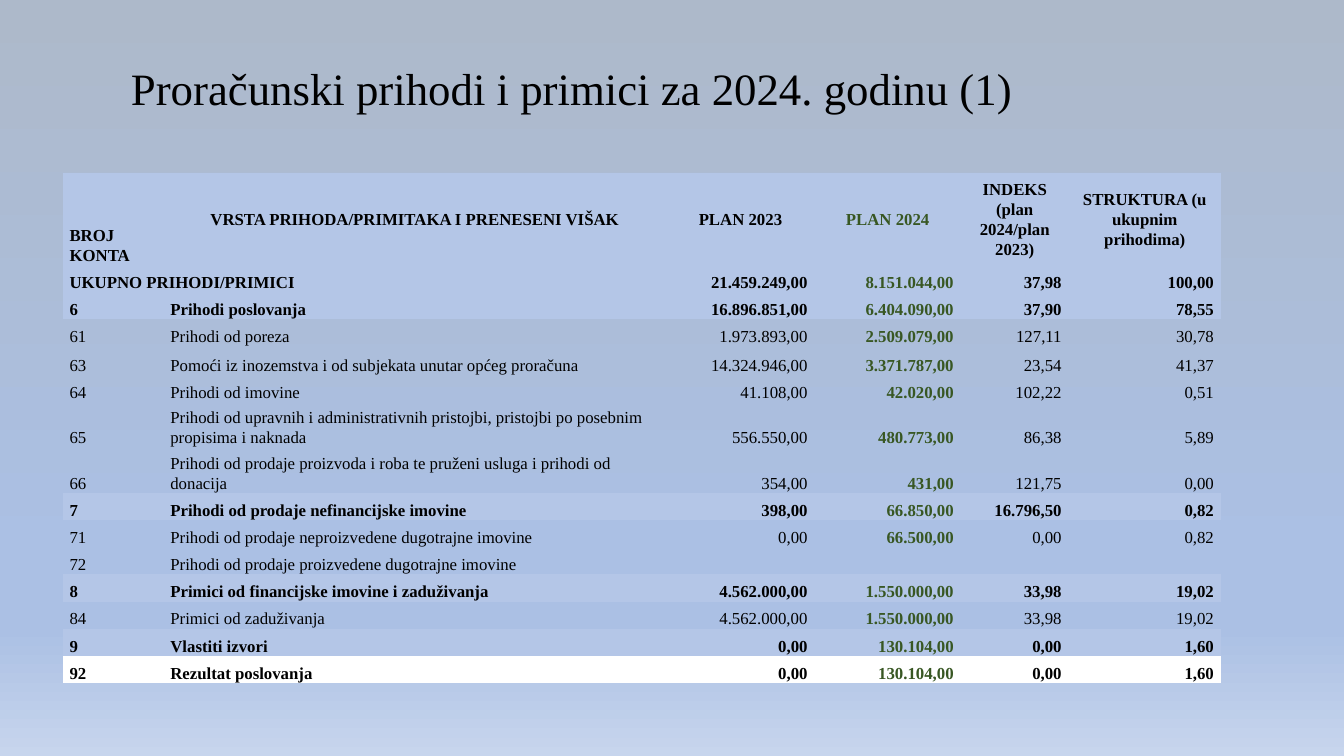
from dataclasses import dataclass
from typing import Optional

from lxml import etree
from pptx import Presentation, util as u
from pptx.dml.color import RGBColor
from pptx.enum import text
from pptx.oxml.ns import qn

PX = 9144  # EMU; 100 px to the inch
FONT = "Times New Roman"
BLACK = RGBColor(0x00, 0x00, 0x00)
GREEN = RGBColor(0x38, 0x57, 0x23)
BAND = RGBColor(0xB4, 0xC6, 0xE7)
WHITE = RGBColor(0xFF, 0xFF, 0xFF)
SKY = [
    (0, RGBColor(0xAD, 0xB9, 0xCA)),
    (74, RGBColor(0xAB, 0xC0, 0xE4)),
    (83, RGBColor(0xAB, 0xC0, 0xE4)),
    (100, RGBColor(0xC7, 0xD5, 0xED)),
]
NO_STYLE_NO_GRID = "{2D5ABB26-0587-4C30-8999-92F81FD0307C}"
LEFT, CENTER, RIGHT = text.PP_ALIGN.LEFT, text.PP_ALIGN.CENTER, text.PP_ALIGN.RIGHT
BOTTOM, MIDDLE = text.MSO_ANCHOR.BOTTOM, text.MSO_ANCHOR.MIDDLE

TITLE = "Proračunski prihodi i primici za 2024. godinu (1)"
COLUMN_WIDTHS = [100, 499, 147, 145, 107, 151]
PLAN_2024 = 3
HEADERS = ["BROJ KONTA", "VRSTA PRIHODA/PRIMITAKA I PRENESENI VIŠAK", "PLAN 2023",
           "PLAN 2024", "INDEKS (plan 2024/plan 2023)",
           "STRUKTURA (u ukupnim prihodima)"]
HEADER_HEIGHT = 91


@dataclass
class Account:
    code: str
    name: str
    values: str
    fill: Optional[RGBColor] = None
    height: int = 27

    @property
    def cells(self) -> list[str]:
        amounts = self.values.split() or [""] * 4
        return [self.code, self.name, *amounts]


ACCOUNTS = [
    Account("UKUPNO PRIHODI/PRIMICI", "", "21.459.249,00 8.151.044,00 37,98 100,00", BAND),
    Account("6", "Prihodi poslovanja", "16.896.851,00 6.404.090,00 37,90 78,55", BAND),
    Account("61", "Prihodi od poreza", "1.973.893,00 2.509.079,00 127,11 30,78"),
    Account("63", "Pomoći iz inozemstva i od subjekata unutar općeg proračuna",
            "14.324.946,00 3.371.787,00 23,54 41,37", height=28),
    Account("64", "Prihodi od imovine", "41.108,00 42.020,00 102,22 0,51"),
    Account("65", "Prihodi od upravnih i administrativnih pristojbi, "
            "pristojbi po posebnim propisima i naknada",
            "556.550,00 480.773,00 86,38 5,89", height=45),
    Account("66", "Prihodi od prodaje proizvoda i roba te pruženi usluga "
            "i prihodi od donacija", "354,00 431,00 121,75 0,00", height=45),
    Account("7", "Prihodi od prodaje nefinancijske imovine",
            "398,00 66.850,00 16.796,50 0,82", BAND),
    Account("71", "Prihodi od prodaje neproizvedene dugotrajne imovine",
            "0,00 66.500,00 0,00 0,82"),
    Account("72", "Prihodi od prodaje proizvedene dugotrajne imovine", ""),
    Account("8", "Primici od financijske imovine i zaduživanja",
            "4.562.000,00 1.550.000,00 33,98 19,02", BAND),
    Account("84", "Primici od zaduživanja", "4.562.000,00 1.550.000,00 33,98 19,02"),
    Account("9", "Vlastiti izvori", "0,00 130.104,00 0,00 1,60", BAND),
    Account("92", "Rezultat poslovanja", "0,00 130.104,00 0,00 1,60", WHITE),
]


def add_run(p, words: str, size: int, color: RGBColor, bold: bool = False) -> None:
    r = p.add_run()
    r.text = words
    r.font.name, r.font.size, r.font.bold = FONT, u.Pt(size), bold
    r.font.color.rgb = color


def paint_background(s) -> None:
    fill = s.background.fill
    fill.gradient()
    fill.gradient_angle = 270
    stops = s._element.find(".//" + qn("a:gsLst"))
    for stop in list(stops):
        stops.remove(stop)
    for percent, color in SKY:
        stop = etree.SubElement(stops, qn("a:gs"), pos=str(percent * 1000))
        etree.SubElement(stop, qn("a:srgbClr"), val=str(color))


def add_title(s) -> None:
    sp = s.shapes.add_textbox(120 * PX, 31 * PX, 1100 * PX, 119 * PX)
    tf = sp.text_frame
    tf.word_wrap = True
    tf.vertical_anchor = MIDDLE
    p = tf.paragraphs[0]
    p.line_spacing = 0.9
    add_run(p, TITLE, 32, BLACK)


def fill_cell(cell, words: str, column: int, fill: Optional[RGBColor],
              align, anchor) -> None:
    cell.margin_left = cell.margin_right = 7 * PX
    cell.margin_top = cell.margin_bottom = 0
    cell.vertical_anchor = anchor
    if fill is None:
        cell.fill.background()
    else:
        cell.fill.solid()
        cell.fill.fore_color.rgb = fill
    p = cell.text_frame.paragraphs[0]
    p.alignment = align
    p.line_spacing = 1.07
    p.space_after = u.Pt(8)
    if words:
        plan = column == PLAN_2024
        add_run(p, words, 12, GREEN if plan else BLACK, plan or fill is not None)
    else:  # keeps an empty cell from stretching its row
        etree.SubElement(p._p, qn("a:endParaRPr"), sz="1200")


def add_budget_table(s) -> None:
    heights = [HEADER_HEIGHT] + [account.height for account in ACCOUNTS]
    frame = s.shapes.add_table(len(heights), len(COLUMN_WIDTHS), 62 * PX, 172 * PX,
                               sum(COLUMN_WIDTHS) * PX, sum(heights) * PX)
    table = frame.table
    table.horz_banding = False
    table._tbl.find(".//" + qn("a:tableStyleId")).text = NO_STYLE_NO_GRID
    for column, width in zip(table.columns, COLUMN_WIDTHS):
        column.width = width * PX
    for row, height in zip(table.rows, heights):
        row.height = height * PX

    for i, words in enumerate(HEADERS):
        align, anchor = (CENTER, MIDDLE) if i else (LEFT, BOTTOM)
        fill_cell(table.cell(0, i), words, i, BAND, align, anchor)
    for j, account in enumerate(ACCOUNTS, start=1):
        for i, words in enumerate(account.cells):
            align = LEFT if i < 2 else RIGHT
            fill_cell(table.cell(j, i), words, i, account.fill, align, BOTTOM)
    table.cell(1, 0).merge(table.cell(1, 1))


def main() -> None:
    prs = Presentation()
    prs.slide_width, prs.slide_height = 1333 * PX, 750 * PX
    s = prs.slides.add_slide(prs.slide_layouts[6])
    paint_background(s)
    add_title(s)
    add_budget_table(s)
    prs.save("out.pptx")


if __name__ == "__main__":
    main()
